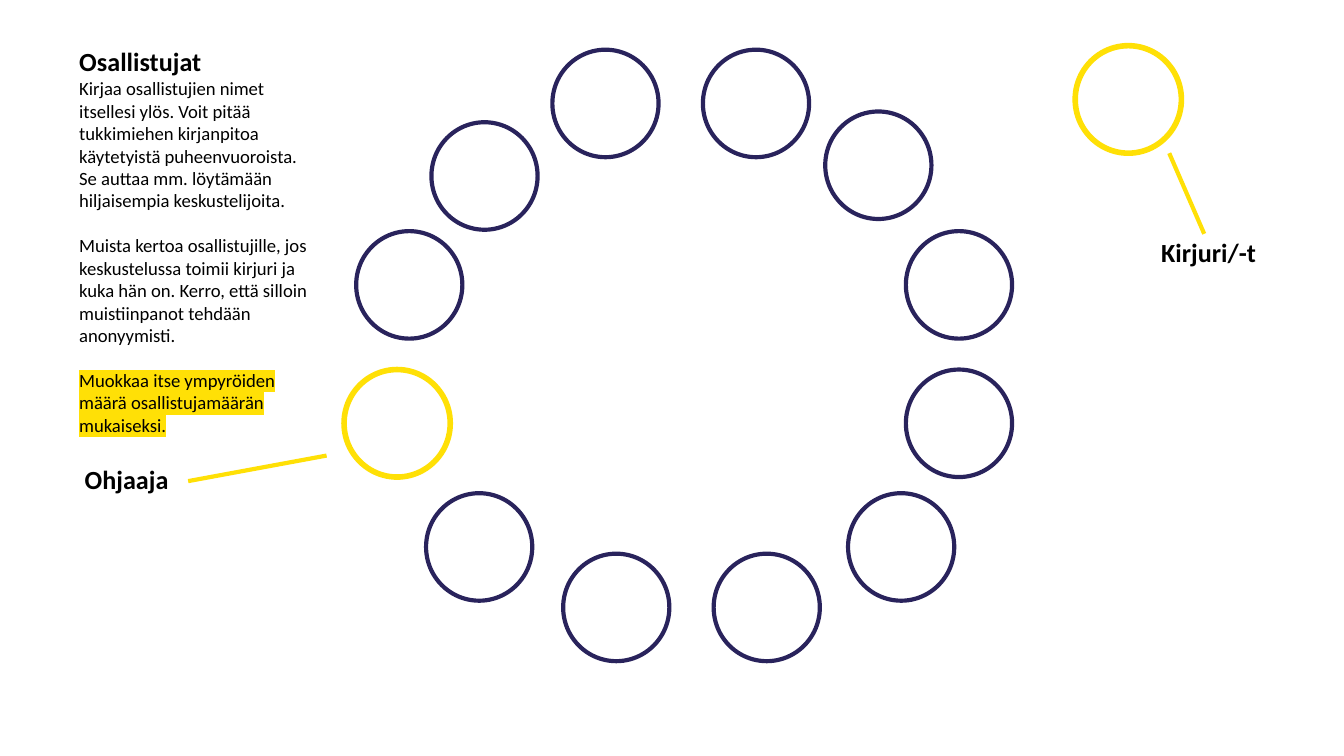
from lxml.etree import SubElement
from pptx import Presentation
from pptx.dml.color import RGBColor
from pptx.enum.shapes import MSO_CONNECTOR as Connector, MSO_SHAPE as Shape
from pptx.oxml.ns import qn
from pptx.util import Inches, Pt

NAVY, YELLOW, BLACK = "29235C", "FFE006", "000000"
HEADING = {"size": Pt(14), "bold": True}
BODY = {"size": Pt(10), "bold": False}

PARTICIPANTS = [
    (4.11, 0.37), (5.23, 0.37), (6.14, 0.83), (6.74, 1.72),
    (6.74, 2.75), (6.31, 3.67), (5.31, 4.12), (4.19, 4.12),
    (3.17, 3.67), (2.65, 1.72), (3.21, 0.91),
]
FACILITATOR = (2.56, 2.75)
SECRETARY = (8, 0.34)

INSTRUCTIONS = [
    {"text": "Osallistujat", "style": HEADING},
    {"text": "Kirjaa osallistujien nimet itsellesi ylös. Voit pitää tukkimiehen "
             "kirjanpitoa käytetyistä puheenvuoroista. Se auttaa mm. löytämään "
             "hiljaisempia keskustelijoita."},
    {"text": "Muista kertoa osallistujille, jos keskustelussa toimii kirjuri ja "
             "kuka hän on. Kerro, että silloin muistiinpanot tehdään anonyymisti.",
     "gap": 12},
    {"text": "Muokkaa itse ympyröiden määrä osallistujamäärän mukaiseksi.",
     "gap": 12, "highlight": YELLOW},
]


def color(value):
    return RGBColor.from_string(value)


class SeatingPage:
    """Holds the slide and the style shared by its elements."""

    font = "Calibri"
    inset = Inches(0.16)
    circle_size = (Inches(0.79), Inches(0.8))

    def __init__(self, page):
        self.page = page

    def outline(self, item, tint, width):
        item.line.color.rgb = color(tint)
        item.line.width = Pt(width)

    def circle(self, place, tint=NAVY, width=2.25):
        left, top = map(Inches, place)
        seat = self.page.shapes.add_shape(Shape.OVAL, left, top, *self.circle_size)
        seat.shadow.inherit = False
        seat.fill.background()
        self.outline(seat, tint, width)

    def pointer(self, start, end):
        line = self.page.shapes.add_connector(
            Connector.STRAIGHT, *map(Inches, start + end))
        self.outline(line, YELLOW, 2.25)
        SubElement(line._element.spPr, qn("a:effectLst"))

    def text(self, place, size, paragraphs, line_spacing=1.0):
        box = self.page.shapes.add_textbox(*map(Inches, place + size))
        frame = box.text_frame
        frame.word_wrap = True
        for side in ("left", "top", "right", "bottom"):
            setattr(frame, f"margin_{side}", self.inset)
        for index, content in enumerate(paragraphs):
            para = frame.add_paragraph() if index else frame.paragraphs[0]
            para.line_spacing = line_spacing
            para.space_before = Pt(content.get("gap", 0))
            span = para.add_run()
            span.text = content["text"]
            for name, value in content.get("style", BODY).items():
                setattr(span.font, name, value)
            span.font.color.rgb = color(BLACK)
            if "highlight" in content:
                self.highlight(span, content["highlight"])
            span.font.name = self.font

    def highlight(self, span, tint):
        mark = SubElement(span._r.get_or_add_rPr(), qn("a:highlight"))
        SubElement(mark, qn("a:srgbClr")).set("val", tint)

    def label(self, place, text):
        self.text(place, (1.29, 1.9), [{"text": text, "style": HEADING}], 1.15)


def main():
    deck = Presentation()
    deck.slide_width = Inches(10)
    deck.slide_height = deck.slide_width * 9 // 16
    blank_layout = deck.slide_layouts[6]
    seating = SeatingPage(deck.slides.add_slide(blank_layout))

    seating.text((0.43, 0.18), (2.07, 3.25), INSTRUCTIONS)
    for place in PARTICIPANTS:
        seating.circle(place)
    for place in (FACILITATOR, SECRETARY):
        seating.circle(place, YELLOW, 3)

    seating.label((0.47, 3.28), "Ohjaaja")
    seating.pointer((1.4, 3.58), (2.43, 3.39))
    seating.label((8.48, 1.59), "Kirjuri/-t")
    seating.pointer((8.7, 1.14), (8.96, 1.74))

    deck.save("out.pptx")


if __name__ == "__main__":
    main()
